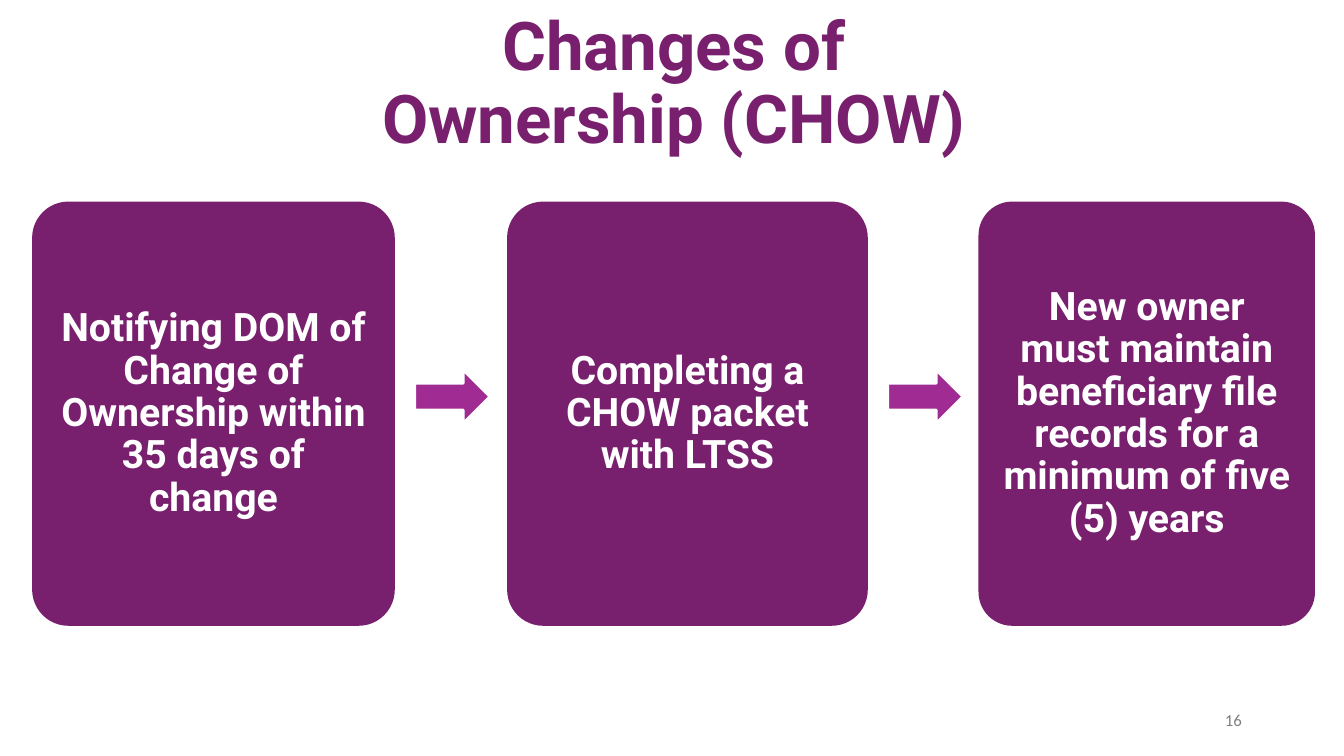
from dataclasses import dataclass

from pptx import Presentation
from pptx.dml.color import RGBColor
from pptx.enum.shapes import MSO_SHAPE as Shape
from pptx.enum.text import MSO_ANCHOR as Anchor, MSO_AUTO_SIZE as AutoSize, PP_ALIGN as Align
from pptx.util import Cm, Pt

TITLE = "Changes of Ownership (CHOW)"
PAGE_NUMBER = "16"
# text, left and width in cm
STEPS = [
    ("Notifying DOM of Change of Ownership within 35 days of change", 0.81, 9.14),
    ("Completing a CHOW packet with LTSS", 12.78, 9.09),
    ("New owner must maintain beneficiary file records for a minimum of five (5) years",
     24.66, 8.48),
]
CARD_TOP, CARD_HEIGHT = 5.08, 10.69
ARROW_TOP, ARROW_WIDTH, ARROW_HEIGHT, ARROW_GAP = 9.32, 1.9, 1.35, 0.5


@dataclass(frozen=True)
class Theme:
    purple: str = "78206E"
    arrow: str = "A02B93"
    white: str = "FFFFFF"
    gray: str = "808080"
    heading_font: str = "Roboto"
    number_font: str = "Calibri"
    title_size: int = 48
    step_size: int = 28
    number_size: int = 12


THEME = Theme()


def write(shape, text, font, size, color, bold=True, align=Align.CENTER, inset=None):
    """Put one formatted run into a shape, centred vertically."""
    frame = shape.text_frame
    frame.word_wrap = True
    frame.auto_size = AutoSize.NONE
    frame.vertical_anchor = Anchor.MIDDLE
    if inset is not None:
        frame.margin_left = frame.margin_right = Cm(inset)
        frame.margin_top = frame.margin_bottom = Cm(inset)
    para = frame.paragraphs[0]
    para.alignment = align
    para.line_spacing = 0.9
    para.space_before = Pt(0)
    span = para.add_run()
    span.text = text
    span.font.name = font
    span.font.size = Pt(size)
    span.font.bold = bold
    span.font.color.rgb = RGBColor.from_string(color)


def add_filled(page, kind, left, top, width, height, color):
    shape = page.shapes.add_shape(kind, Cm(left), Cm(top), Cm(width), Cm(height))
    shape.shadow.inherit = False
    shape.fill.solid()
    shape.fill.fore_color.rgb = RGBColor.from_string(color)
    shape.line.fill.background()
    return shape


def add_title(page):
    title = page.shapes.title
    title.left, title.top, title.width, title.height = Cm(9.27), Cm(0.74), Cm(15.42), Cm(2.82)
    write(title, TITLE, THEME.heading_font, THEME.title_size, THEME.purple, inset=0.28)


def add_step(page, text, left, width):
    card = add_filled(page, Shape.ROUNDED_RECTANGLE, left, CARD_TOP, width, CARD_HEIGHT,
                      THEME.purple)
    card.adjustments[0] = 0.1
    write(card, text, THEME.heading_font, THEME.step_size, THEME.white, inset=0.3)


def add_arrow(page, left):
    arrow = add_filled(page, Shape.RIGHT_ARROW, left, ARROW_TOP, ARROW_WIDTH, ARROW_HEIGHT,
                       THEME.arrow)
    arrow.line.color.rgb = RGBColor.from_string(THEME.white)
    arrow.line.width = Pt(2)


def add_page_number(page):
    box = page.shapes.add_textbox(Cm(23.93), Cm(17.65), Cm(7.62), Cm(1.02))
    write(box, PAGE_NUMBER, THEME.number_font, THEME.number_size, THEME.gray,
          bold=False, align=Align.RIGHT)


def main():
    deck = Presentation()
    deck.slide_width, deck.slide_height = Cm(33.87), Cm(19.05)
    page = deck.slides.add_slide(deck.slide_layouts[5])
    add_title(page)
    for text, left, width in STEPS:
        add_step(page, text, left, width)
    for _, left, width in STEPS[:-1]:
        add_arrow(page, left + width + ARROW_GAP)
    add_page_number(page)
    deck.save("out.pptx")


if __name__ == "__main__":
    main()
